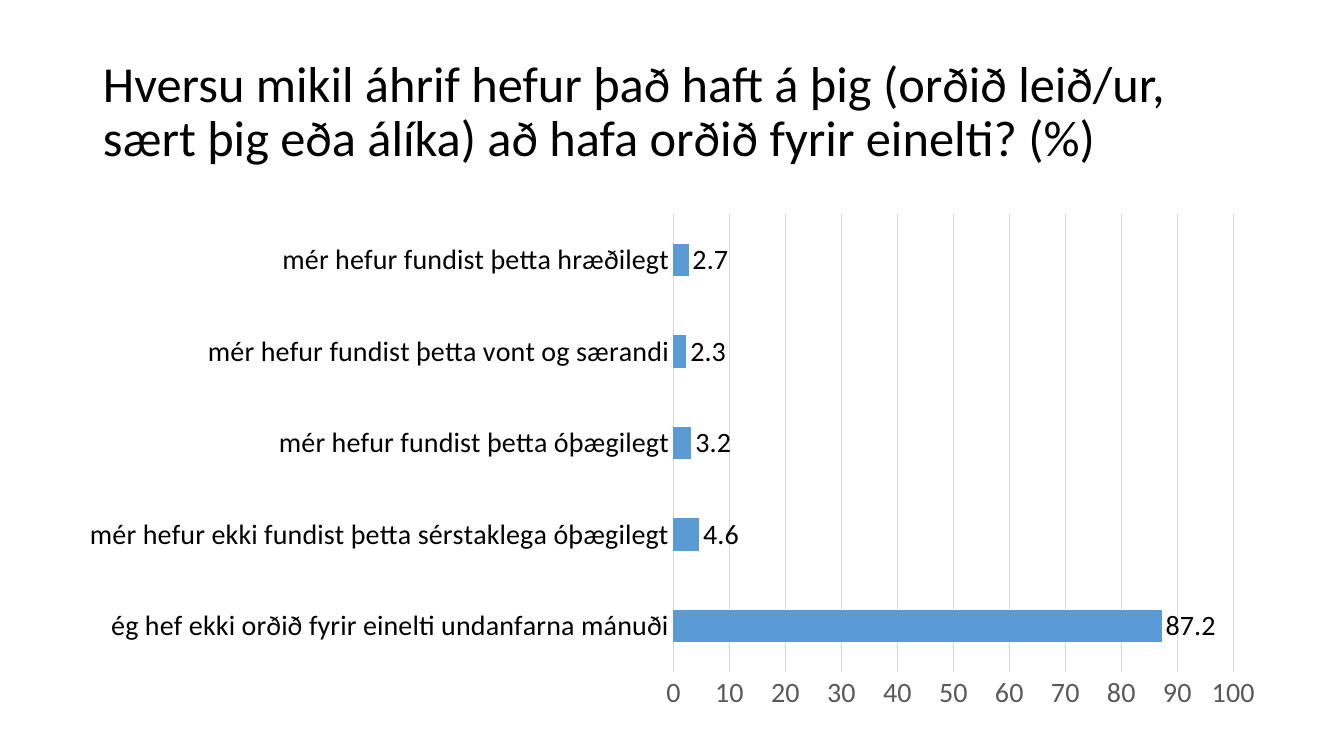
"""Build a slide with a bar chart on how bullying has affected respondents."""
import pptx
import pptx.chart.data
import pptx.dml.color
import pptx.enum.chart
import pptx.enum.text
import pptx.oxml
import pptx.oxml.ns
import pptx.util

PX = 914400 / 100.8
FONT = "Calibri"


def px(*lengths):
    return [pptx.util.Emu(round(length * PX)) for length in lengths]


def color(hex_string):
    return pptx.dml.color.RGBColor.from_string(hex_string)


deck = pptx.Presentation()
deck.slide_width, deck.slide_height = px(1344, 756)
slide = deck.slides.add_slide(deck.slide_layouts[6])

question = slide.shapes.add_textbox(*px(93, 40, 1159, 146)).text_frame
question.word_wrap = True
question.vertical_anchor = pptx.enum.text.MSO_ANCHOR.MIDDLE
question.paragraphs[0].line_spacing = 0.9
wording = question.paragraphs[0].add_run()
wording.text = (
    "Hversu mikil áhrif hefur það haft á þig (orðið leið/ur, "
    "sært þig eða álíka) að hafa orðið fyrir einelti? (%)"
)
wording.font.name = FONT
wording.font.size = pptx.util.Pt(36)
wording.font.color.rgb = color("000000")

answers = {
    "ég hef ekki orðið fyrir einelti undanfarna mánuði": 87.2,
    "mér hefur ekki fundist þetta sérstaklega óþægilegt": 4.6,
    "mér hefur fundist þetta óþægilegt": 3.2,
    "mér hefur fundist þetta vont og særandi": 2.3,
    "mér hefur fundist þetta hræðilegt": 2.7,
}
survey = pptx.chart.data.CategoryChartData(number_format="0.0")
survey.categories = list(answers)
survey.add_series("Series 1", list(answers.values()))
chart = slide.shapes.add_chart(
    pptx.enum.chart.XL_CHART_TYPE.BAR_CLUSTERED, *px(65, 204, 1217, 514), survey
).chart
chart.has_title = False
chart.has_legend = False

bars = chart.plots[0]
bars.gap_width = 182
bars.vary_by_categories = False
bars.series[0].format.fill.solid()
bars.series[0].format.fill.fore_color.rgb = color("5B9BD5")
bars.has_data_labels = True
percentages = bars.data_labels
percentages.show_value = True
percentages.number_format = "0.0"
percentages.number_format_is_linked = False
percentages.position = pptx.enum.chart.XL_LABEL_POSITION.OUTSIDE_END

answer_axis, percent_axis = chart.category_axis, chart.value_axis
for font, ink in (
    (chart.font, "000000"),
    (percentages.font, "000000"),
    (answer_axis.tick_labels.font, "000000"),
    (percent_axis.tick_labels.font, "595959"),
):
    font.name = FONT
    font.size = pptx.util.Pt(20)
    font.color.rgb = color(ink)

for axis in (answer_axis, percent_axis):
    axis.major_tick_mark = pptx.enum.chart.XL_TICK_MARK.NONE
    axis.minor_tick_mark = pptx.enum.chart.XL_TICK_MARK.NONE
answer_axis.has_major_gridlines = False
percent_axis.has_major_gridlines = True
percent_axis.minimum_scale = 0
percent_axis.maximum_scale = 100
percent_axis.major_unit = 10
percent_axis.tick_labels.number_format = "0"
percent_axis.tick_labels.number_format_is_linked = False
percent_axis.format.line.fill.background()
for rule in (answer_axis.format.line, percent_axis.major_gridlines.format.line):
    rule.color.rgb = color("D9D9D9")
    rule.width = pptx.util.Pt(0.75)

plot_area = chart.plots[0]._element.getparent()
for automatic in plot_area.findall(pptx.oxml.ns.qn("c:layout")):
    plot_area.remove(automatic)
plot_area.insert(0, pptx.oxml.parse_xml(
    f'<c:layout {pptx.oxml.ns.nsdecls("c")}><c:manualLayout>'
    '<c:layoutTarget val="inner"/><c:xMode val="edge"/><c:yMode val="edge"/>'
    '<c:x val="0.5"/><c:y val="0.02"/><c:w val="0.46"/><c:h val="0.89"/>'
    '</c:manualLayout></c:layout>'
))

deck.save("out.pptx")
